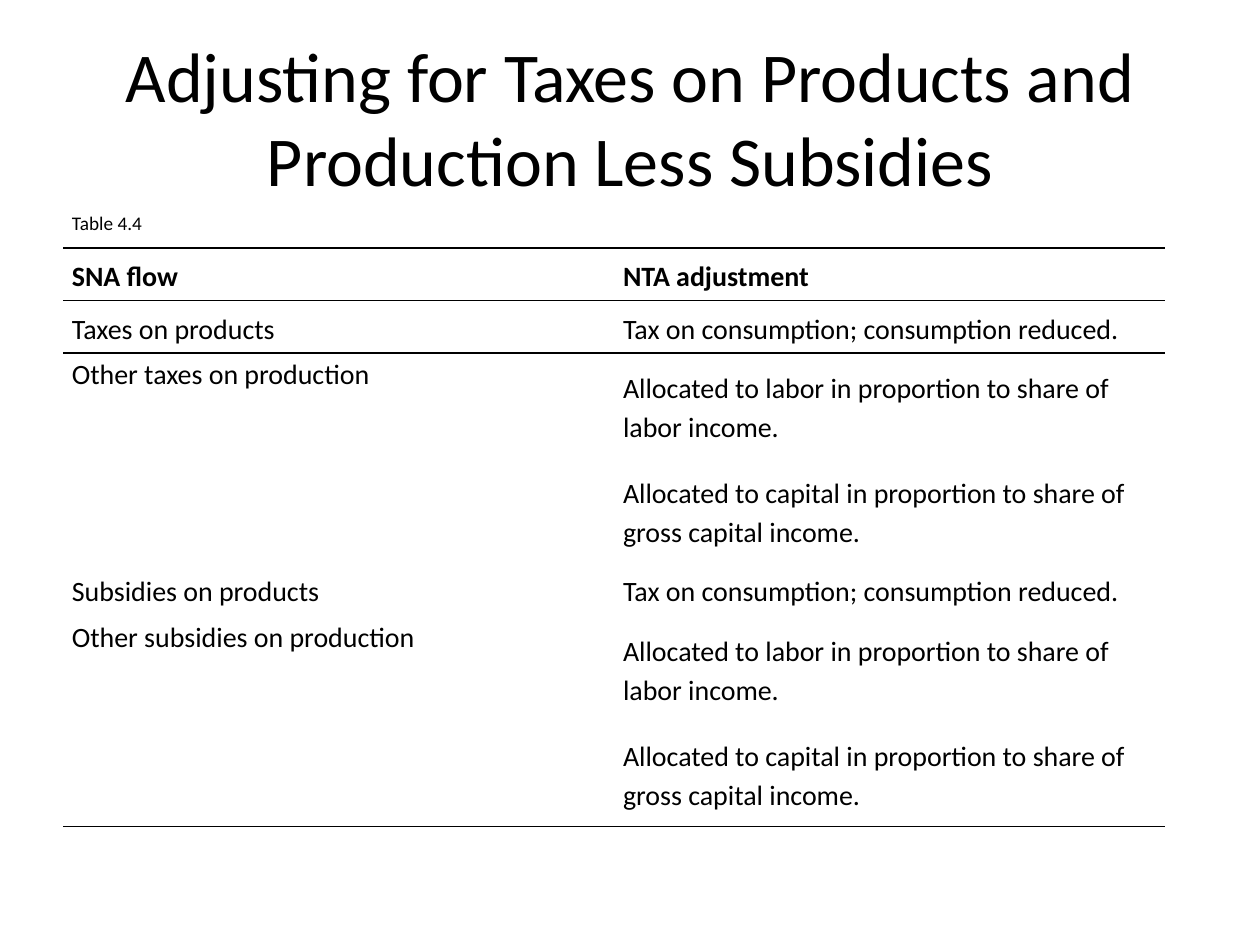
import lxml.etree
import pptx
import pptx.dml.color
import pptx.enum.text
import pptx.oxml.ns
import pptx.util

Cm = pptx.util.Cm
Pt = pptx.util.Pt
ANCHOR = pptx.enum.text.MSO_ANCHOR
FONT = "Calibri"
COLORS = {"ink": "000000", "paper": "FFFFFF"}
NO_STYLE = "{2D5ABB26-0587-4C30-8999-92F81FD0307C}"
CONSUMPTION = "Tax on consumption; consumption reduced."
LABOR = "Allocated to labor in proportion to share of labor income."
CAPITAL = "Allocated to capital in proportion to share of gross capital income."
ROWS = [
    ("Table 4.4", ""),
    ("SNA flow", "NTA adjustment"),
    ("Taxes on products", CONSUMPTION),
    ("Other taxes on production", LABOR),
    ("", CAPITAL),
    ("Subsidies on products", CONSUMPTION),
    ("Other subsidies on production", LABOR),
    ("", CAPITAL),
]
CAPTION_ROW, HEADER_ROW, LAST_ROW = 0, 1, len(ROWS) - 1
SPLIT_ROWS = (3, 6)
RULED_ROWS = (CAPTION_ROW, HEADER_ROW, LAST_ROW)


def style_paragraph(paragraph, size, bold=False):
    """Set the font of a whole paragraph."""
    font = paragraph.font
    font.name, font.size, font.bold = FONT, Pt(size), bold
    font.color.rgb = pptx.dml.color.RGBColor.from_string(COLORS["ink"])


def add_rule(cell, side):
    """Draw a one-point border on the 'T' or 'B' side of a cell."""
    qn = pptx.oxml.ns.qn
    properties = cell._tc.get_or_add_tcPr()
    line = lxml.etree.SubElement(properties, qn(f"a:ln{side}"), w=str(Pt(1)))
    fill = lxml.etree.SubElement(line, qn("a:solidFill"))
    lxml.etree.SubElement(fill, qn("a:srgbClr"), val=COLORS["ink"])


def fill_cell(cell, row, text):
    """Write, format and rule one table cell."""
    cell.margin_left = cell.margin_right = Cm(0.18)
    cell.margin_top = cell.margin_bottom = 0
    cell.vertical_anchor = ANCHOR.TOP if cell.is_merge_origin and row in SPLIT_ROWS else ANCHOR.MIDDLE
    cell.text = text
    paragraph = cell.text_frame.paragraphs[0]
    paragraph.line_spacing = 1.15
    style_paragraph(paragraph, 11 if row == CAPTION_ROW else 16, row == HEADER_ROW)
    if row - 1 in RULED_ROWS:
        add_rule(cell, "T")
    if row in RULED_ROWS or (cell.is_merge_origin and row + 1 == LAST_ROW):
        add_rule(cell, "B")
    cell.fill.background()


def add_title(slide, left, top, width, height):
    """Place and format the title placeholder."""
    title = slide.shapes.title
    title.left, title.top, title.width, title.height = left, top, width, height
    title.text = "Adjusting for Taxes on Products and Production Less Subsidies"
    title.text_frame.vertical_anchor = ANCHOR.MIDDLE
    paragraph = title.text_frame.paragraphs[0]
    paragraph.alignment = pptx.enum.text.PP_ALIGN.CENTER
    style_paragraph(paragraph, 40)


def add_adjustment_table(slide, left, top, width, height):
    """Add the adjustment table, with double height for two-line rows."""
    table = slide.shapes.add_table(len(ROWS), 2, left, top, width, height).table
    table.first_row = table.horz_banding = False
    table._tbl.tblPr.find(pptx.oxml.ns.qn("a:tableStyleId")).text = NO_STYLE
    table.cell(CAPTION_ROW, 0).merge(table.cell(CAPTION_ROW, 1))
    for row in SPLIT_ROWS:
        table.cell(row, 0).merge(table.cell(row + 1, 0))
    units = [2 if texts[1] in (LABOR, CAPITAL) else 1 for texts in ROWS]
    for row, texts in enumerate(ROWS):
        table.rows[row].height = height * units[row] // sum(units)
        for column, text in enumerate(texts):
            fill_cell(table.cell(row, column), row, text)


def main():
    """Build and save the slide."""
    presentation = pptx.Presentation()
    presentation.slide_width, presentation.slide_height = Cm(25.4), Cm(19.05)
    slide = presentation.slides.add_slide(presentation.slide_layouts[5])
    background = slide.background.fill
    background.solid()
    background.fore_color.rgb = pptx.dml.color.RGBColor.from_string(COLORS["paper"])
    add_title(slide, Cm(1.27), Cm(0.76), Cm(22.86), Cm(3.18))
    add_adjustment_table(slide, Cm(1.27), Cm(3.94), Cm(22.22), Cm(12.72))
    presentation.save("out.pptx")


if __name__ == "__main__":
    main()
